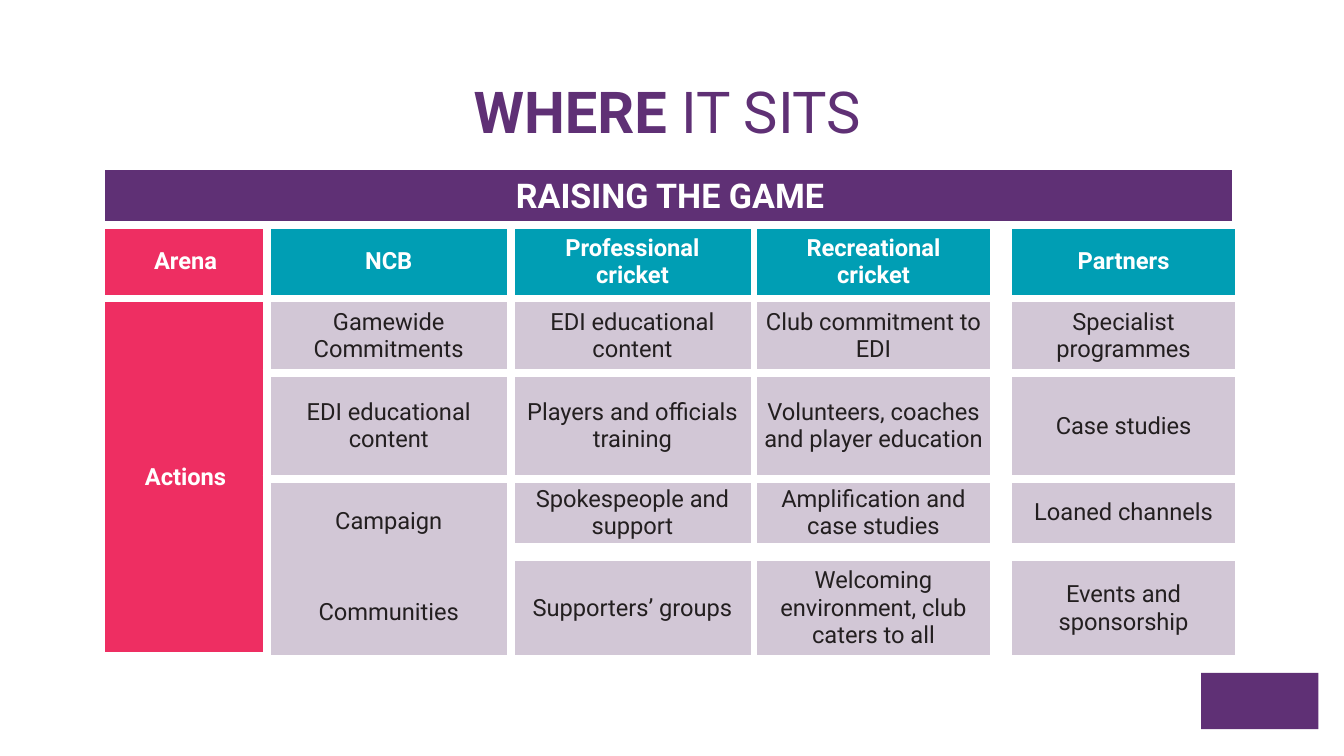
import pptx
import pptx.dml.color
import pptx.enum.shapes
import pptx.enum.text
import pptx.oxml.ns
import pptx.util
from lxml import etree

Inches = pptx.util.Inches
Pt = pptx.util.Pt

PURPLE, PINK, TEAL, LILAC = "5F3075", "EE2E62", "009EB4", "D2C7D6"
WHITE, INK = "FFFFFF", "231F20"

COLUMN_WIDTHS = [1.52, 2.29, 2.28, 2.24, 0.17, 2.11]
ROW_HEIGHTS = [0.52, 0.69, 0.7, 0.99, 0.64, 0.13, 0.89]
SPACER_COLUMN, GAP_ROW = 4, 5

# (first row, first column, last row, last column)
MERGES = [(0, 0, 0, 5), (2, 0, 6, 0), (4, 1, 6, 1), (1, 4, 6, 4)]

# White rules in points, keyed by the row or column that follows the rule
COLUMN_RULES = {1: 6, 2: 6, 3: 4.5}
ROW_RULES = {1: 6, 2: 6, 3: 6, 4: 6}

# Within a cell, \n starts a paragraph and \v breaks a line
ARENAS = [
    ["RAISING THE GAME"],
    ["Arena", "NCB", "Professional\vcricket", "Recreational\vcricket", "", "Partners"],
    ["Actions", "Gamewide\vCommitments", "EDI educational\vcontent",
     "Club commitment to\vEDI", "", "Specialist\vprogrammes"],
    ["", "EDI educational\vcontent", "Players and officials\vtraining",
     "Volunteers, coaches\vand player education", "", "Case studies"],
    ["", "Campaign\nCommunities", "Spokespeople and\vsupport",
     "Amplification and\vcase studies", "", "Loaned channels"],
    [],
    ["", "", "Supporters’ groups",
     "Welcoming\venvironment, club\vcaters to all", "", "Events and\vsponsorship"],
]


def rgb(value):
    return pptx.dml.color.RGBColor.from_string(value)


def cell_style(row, column):
    """Return fill, text colour, size and weight for a place in the table."""
    if row == 0:
        return PURPLE, WHITE, 23, True
    if column == 0:
        return PINK, WHITE, 16, True
    if row == 1:
        return TEAL, WHITE, 16, True
    return LILAC, INK, 16, False


class ArenaSlide:
    font = "Roboto"

    def __init__(self, presentation):
        self.slide = presentation.slides.add_slide(presentation.slide_layouts[6])

    def format_run(self, run, size, color, bold):
        run.font.name = self.font
        run.font.size = Pt(size)
        run.font.bold = bold
        run.font.color.rgb = rgb(color)

    def clear_margins(self, holder):
        holder.margin_left = holder.margin_right = 0
        holder.margin_top = holder.margin_bottom = 0

    def title(self, left, top, width, height, words):
        box = self.slide.shapes.add_textbox(
            Inches(left), Inches(top), Inches(width), Inches(height))
        frame = box.text_frame
        frame.word_wrap = True
        self.clear_margins(frame)
        for text, bold in words:
            run = frame.paragraphs[0].add_run()
            run.text = text
            self.format_run(run, 39, PURPLE, bold)

    def rule(self, cell, side, width):
        """Draw a white border on side L, R, T or B of a cell."""
        qn = pptx.oxml.ns.qn
        line = etree.SubElement(cell._tc.get_or_add_tcPr(), qn(f"a:ln{side}"),
                                w=str(Pt(width)))
        fill = etree.SubElement(line, qn("a:solidFill"))
        etree.SubElement(fill, qn("a:srgbClr"), val=WHITE)

    def rules(self, cell, row, column):
        for side, widths, place in (("L", COLUMN_RULES, column),
                                    ("R", COLUMN_RULES, column + 1),
                                    ("T", ROW_RULES, row),
                                    ("B", ROW_RULES, row + 1)):
            if place in widths:
                self.rule(cell, side, widths[place])

    def cell_text(self, cell, text, size, color, bold):
        cell.text_frame.text = text
        for paragraph in cell.text_frame.paragraphs:
            paragraph.alignment = pptx.enum.text.PP_ALIGN.CENTER
            for run in paragraph.runs:
                self.format_run(run, size, color, bold)
        for paragraph in cell.text_frame.paragraphs[1:]:
            paragraph.space_before = Pt(43)

    def shrink_empty(self, cell):
        """Keep an empty cell from stretching its row."""
        paragraph = cell.text_frame.paragraphs[0]._p
        etree.SubElement(paragraph, pptx.oxml.ns.qn("a:endParaRPr"), sz="100")

    def table(self, left, top, rows):
        table = self.slide.shapes.add_table(
            len(ROW_HEIGHTS), len(COLUMN_WIDTHS), Inches(left), Inches(top),
            Inches(sum(COLUMN_WIDTHS)), Inches(sum(ROW_HEIGHTS))).table
        table.first_row = table.horz_banding = False
        for column, width in zip(table.columns, COLUMN_WIDTHS):
            column.width = Inches(width)
        for row, height in zip(table.rows, ROW_HEIGHTS):
            row.height = Inches(height)
        for top_row, first, bottom_row, last in MERGES:
            table.cell(top_row, first).merge(table.cell(bottom_row, last))

        for r in range(len(ROW_HEIGHTS)):
            for c in range(len(COLUMN_WIDTHS)):
                cell = table.cell(r, c)
                self.clear_margins(cell)
                cell.vertical_anchor = pptx.enum.text.MSO_ANCHOR.MIDDLE
                if not cell.is_spanned:
                    self.rules(cell, r, c)
                fill, color, size, bold = cell_style(r, c)
                if r == GAP_ROW or (c == SPACER_COLUMN and r > 0):
                    cell.fill.background()
                else:
                    cell.fill.solid()
                    cell.fill.fore_color.rgb = rgb(fill)
                text = rows[r][c] if c < len(rows[r]) else ""
                if text:
                    self.cell_text(cell, text, size, color, bold)
                else:
                    self.shrink_empty(cell)

    def block(self, left, top, width, height, color):
        block = self.slide.shapes.add_shape(
            pptx.enum.shapes.MSO_SHAPE.RECTANGLE,
            Inches(left), Inches(top), Inches(width), Inches(height))
        block.shadow.inherit = False
        block.fill.solid()
        block.fill.fore_color.rgb = rgb(color)
        block.line.fill.background()


def main():
    presentation = pptx.Presentation()
    presentation.slide_width = Inches(12.6)
    presentation.slide_height = Inches(7.09)
    arena_slide = ArenaSlide(presentation)
    arena_slide.table(0.98, 1.59, ARENAS)
    arena_slide.title(4.44, 0.71, 3.73, 0.68, [("WHERE ", True), ("IT SITS", False)])
    arena_slide.block(11.26, 6.31, 1.1, 0.53, PURPLE)
    presentation.save("out.pptx")


if __name__ == "__main__":
    main()
